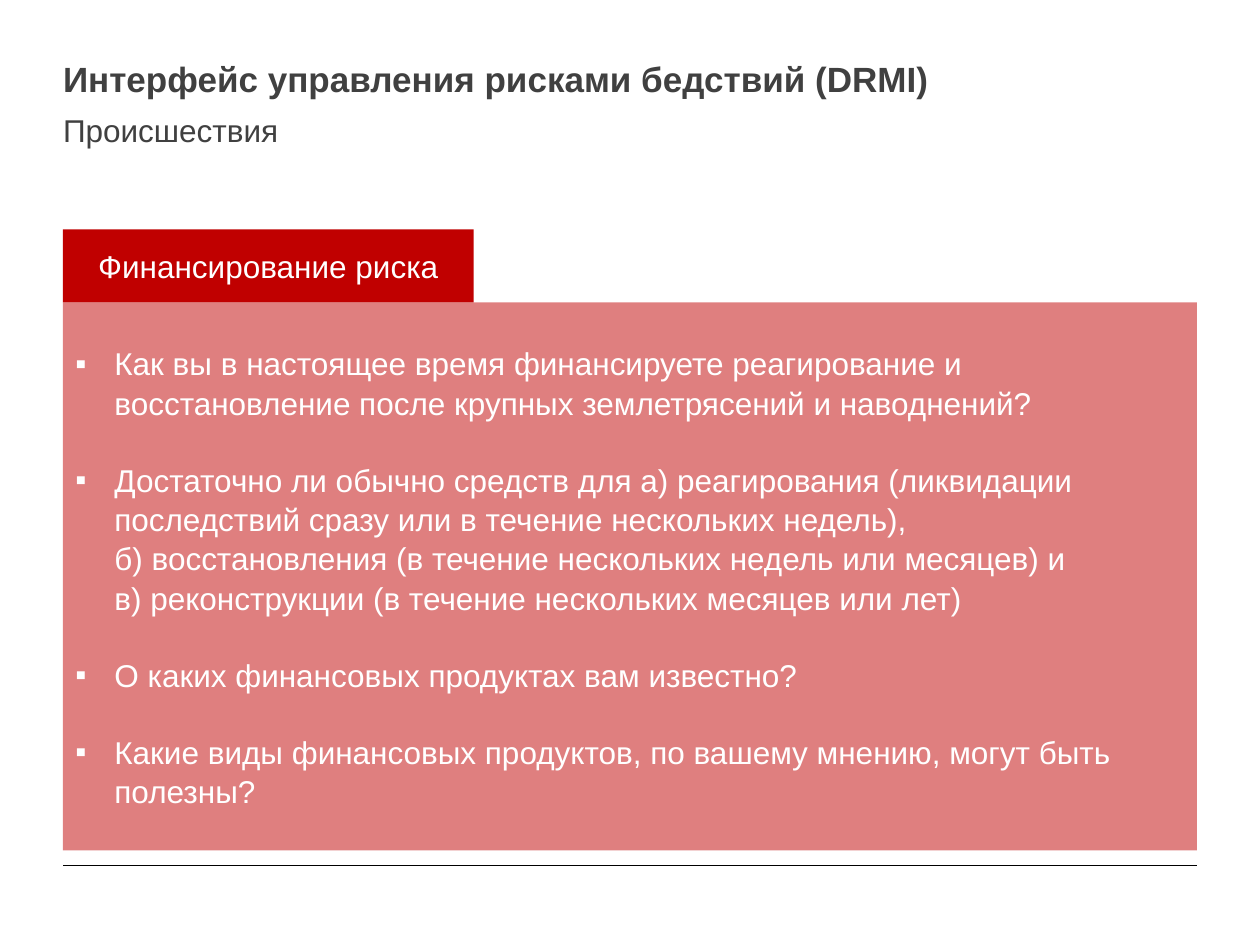
from dataclasses import dataclass

from lxml import etree
from pptx import Presentation, util as u
from pptx.dml.color import RGBColor
from pptx.enum import shapes, text
from pptx.oxml import ns


@dataclass(frozen=True)
class Theme:
    font: str = "Arial"
    ink: str = "404040"
    accent: str = "C00000"
    light: str = "FFFFFF"
    rule: str = "000000"
    heading_size: float = 20
    text_size: float = 18
    rule_width: float = 0.25
    panel_opacity: int = 50
    bullet_indent: float = 0.31
    bullet_gap: float = 21.6
    line_spacing: float = 1.04


@dataclass(frozen=True)
class Area:
    column: float
    row: float
    columns: float
    rows: float

    def frame(self) -> dict:
        return {
            "left": u.Inches(self.column * COLUMN),
            "top": u.Inches(self.row * ROW),
            "width": u.Inches(self.columns * COLUMN),
            "height": u.Inches(self.rows * ROW),
        }


@dataclass(frozen=True)
class Block:
    area: Area
    paragraphs: tuple
    color: str
    size: float
    bold: bool = False
    align: int = text.PP_ALIGN.LEFT
    anchor: int = text.MSO_ANCHOR.MIDDLE
    fill: str = ""
    opacity: int = 100
    bulleted: bool = False
    inset: float = 0.1


THEME = Theme()
WIDTH, HEIGHT = 10, 7.5
COLUMN, ROW = WIDTH / 100, HEIGHT / 100
MARGIN, CONTENT = 5, 90
PANEL_TOP, TAB_ROWS, RULE_ROW = 32, 7.73, 91.6

HEADING = Block(
    Area(MARGIN, 6, CONTENT, 4.53),
    ("Интерфейс управления рисками бедствий (DRMI)",),
    THEME.ink, THEME.heading_size, bold=True, inset=0,
)
SUBHEADING = Block(
    Area(MARGIN, 11.73, CONTENT, 4),
    ("Происшествия",),
    THEME.ink, THEME.text_size, anchor=text.MSO_ANCHOR.TOP, inset=0,
)
QUESTIONS = Block(
    Area(MARGIN, PANEL_TOP, CONTENT, 58),
    (
        "Как вы в настоящее время финансируете реагирование и восстановление "
        "после крупных землетрясений и наводнений?",
        "Достаточно ли обычно средств для а) реагирования (ликвидации последствий "
        "сразу или в течение нескольких недель),\v"
        "б) восстановления (в течение нескольких недель или месяцев) и\v"
        "в) реконструкции (в течение нескольких месяцев или лет)",
        "О каких финансовых продуктах вам известно?",
        "Какие виды финансовых продуктов, по вашему мнению, могут быть полезны?",
    ),
    THEME.light, THEME.text_size, fill=THEME.accent,
    opacity=THEME.panel_opacity, bulleted=True,
)
TOPIC = Block(
    Area(MARGIN, PANEL_TOP - TAB_ROWS, 32.6, TAB_ROWS),
    ("Финансирование риска",),
    THEME.light, THEME.text_size, align=text.PP_ALIGN.CENTER, fill=THEME.accent,
)


def apply(target, values: dict) -> None:
    for name, value in values.items():
        setattr(target, name, value)


def set_bullet(paragraph, bulleted: bool) -> None:
    properties = paragraph._p.get_or_add_pPr()
    indent = u.Inches(THEME.bullet_indent) if bulleted else 0
    properties.set("marL", str(indent))
    properties.set("indent", str(-indent))
    if bulleted:
        etree.SubElement(properties, ns.qn("a:buFont"), typeface=THEME.font)
        etree.SubElement(properties, ns.qn("a:buChar"), char="▪")
    else:
        etree.SubElement(properties, ns.qn("a:buNone"))


def write(shape, block: Block) -> None:
    apply(shape, block.area.frame())
    frame = shape.text_frame
    inset = u.Inches(block.inset)
    apply(frame, {
        "word_wrap": True,
        "auto_size": text.MSO_AUTO_SIZE.NONE,
        "vertical_anchor": block.anchor,
        "margin_left": inset,
        "margin_right": inset,
        "margin_top": inset // 2,
        "margin_bottom": inset // 2,
    })
    for index, wording in enumerate(block.paragraphs):
        paragraph = frame.add_paragraph() if index else frame.paragraphs[0]
        paragraph.text = wording
        set_bullet(paragraph, block.bulleted)
        apply(paragraph, {
            "alignment": block.align,
            "line_spacing": THEME.line_spacing if block.bulleted else 1.0,
            "space_before": u.Pt(THEME.bullet_gap if index else 0),
        })
        for run in paragraph.runs:
            apply(run.font, {
                "name": THEME.font,
                "size": u.Pt(block.size),
                "bold": block.bold,
            })
            run.font.color.rgb = RGBColor.from_string(block.color)


def draw_panel(slide, block: Block) -> None:
    panel = slide.shapes.add_shape(
        shapes.MSO_SHAPE.RECTANGLE, **block.area.frame())
    panel.shadow.inherit = False
    panel.line.fill.background()
    panel.fill.solid()
    panel.fill.fore_color.rgb = RGBColor.from_string(block.fill)
    if block.opacity < 100:
        color = panel._element.spPr.find(".//" + ns.qn("a:srgbClr"))
        etree.SubElement(color, ns.qn("a:alpha"), val=str(block.opacity * 1000))
    write(panel, block)


def draw_rule(slide) -> None:
    height = u.Inches(RULE_ROW * ROW)
    rule = slide.shapes.add_connector(
        shapes.MSO_CONNECTOR.STRAIGHT,
        u.Inches(MARGIN * COLUMN), height,
        u.Inches((MARGIN + CONTENT) * COLUMN), height,
    )
    rule.line.width = u.Pt(THEME.rule_width)
    rule.line.color.rgb = RGBColor.from_string(THEME.rule)
    etree.SubElement(rule._element.spPr, ns.qn("a:effectLst"))


def main() -> None:
    deck = Presentation()
    apply(deck, {"slide_width": u.Inches(WIDTH), "slide_height": u.Inches(HEIGHT)})
    slide = deck.slides.add_slide(deck.slide_layouts[1])
    write(slide.shapes.title, HEADING)
    write(slide.placeholders[1], SUBHEADING)
    draw_rule(slide)
    for block in (QUESTIONS, TOPIC):
        draw_panel(slide, block)
    deck.save("out.pptx")


if __name__ == "__main__":
    main()
